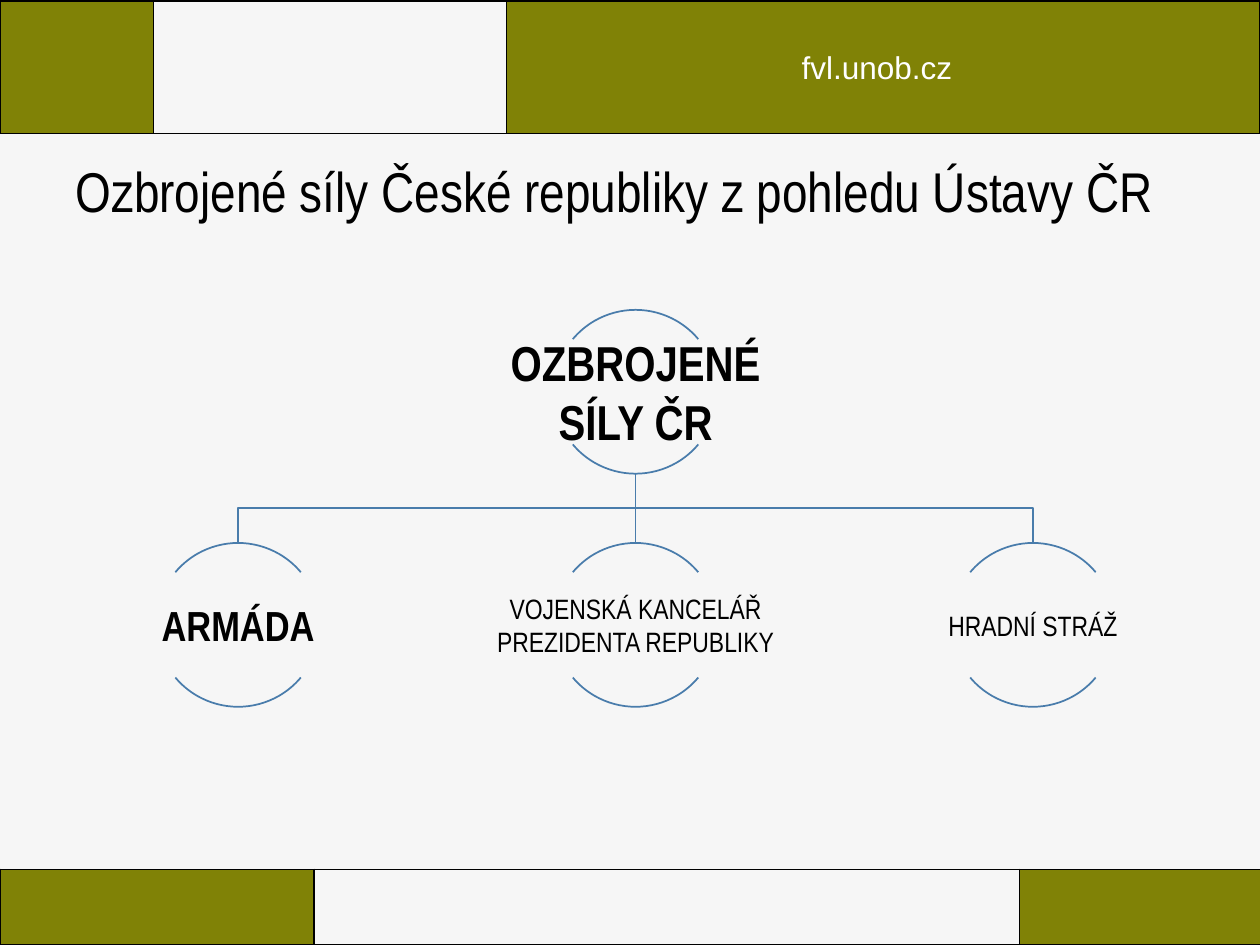
from lxml import etree
from pptx import Presentation
from pptx.dml.color import RGBColor
from pptx.enum.shapes import MSO_CONNECTOR as LINK, MSO_SHAPE as SHAPE
from pptx.enum.text import MSO_ANCHOR as ANCHOR, PP_ALIGN as ALIGN
from pptx.oxml import parse_xml
from pptx.oxml.ns import nsdecls, qn
from pptx.util import Pt

THEME = {
    "paper": "F6F6F6", "olive": "808206", "ink": "000000", "light": "FFFFFF", "link": "497CAB",
    "sans": "Arial", "narrow": "Arial Narrow",
    "site": 18, "title": 32, "root": 28, "army": 24, "unit": 16,
}

SITE = "fvl.unob.cz"
TITLE = "Ozbrojené síly České republiky z pohledu Ústavy ČR"
ROOT = {"lines": ["OZBROJENÉ SÍLY ČR"], "size": THEME["root"], "bold": True}
UNITS = [
    {"lines": ["ARMÁDA"], "size": THEME["army"], "bold": True},
    {"lines": ["VOJENSKÁ KANCELÁŘ", "PREZIDENTA REPUBLIKY"], "size": THEME["unit"], "inset": 0.7},
    {"lines": ["HRADNÍ STRÁŽ"], "size": THEME["unit"], "inset": 0.7},
]
BANDS = [
    {"top": 496.8, "height": 43.2, "columns": [179.3, 403.2, 138.2]},
    {"top": 0.7, "height": 75.6, "columns": [87.8, 201.6, 430.6]},
]

CENTER_X, UNIT_STEP = 363.2, 227.1
RING, LABEL_W, LABEL_H = 93.6, 187.2, 59.8
ROOT_TOP, UNIT_TOP = 177.1, 310.3
ARCS = [(132, 192), (24, 84)]


def color(name):
    return RGBColor.from_string(THEME[name])


def add_text(lines, left, top, width, height, size, font="narrow", ink="ink", bold=False,
             align=ALIGN.CENTER, anchor=ANCHOR.MIDDLE, inset=None, spacing=None):
    frame = slide.shapes.add_textbox(Pt(left), Pt(top), Pt(width), Pt(height)).text_frame
    frame.word_wrap = True
    frame.vertical_anchor = anchor
    if inset is not None:
        frame.margin_left = frame.margin_right = Pt(inset)
        frame.margin_top = frame.margin_bottom = Pt(inset)
    for index, line in enumerate(lines):
        paragraph = frame.add_paragraph() if index else frame.paragraphs[0]
        paragraph.alignment = align
        paragraph.line_spacing = spacing
        run = paragraph.add_run()
        run.text = line
        run.font.name, run.font.size, run.font.bold = THEME[font], Pt(size), bold
        run.font.color.rgb = color(ink)


def add_borders(cell):
    properties = cell._tc.get_or_add_tcPr()
    for index, side in enumerate(["lnL", "lnR", "lnT", "lnB"]):
        properties.insert(index, parse_xml(
            f'<a:{side} {nsdecls("a")} w="{Pt(1)}"><a:solidFill>'
            f'<a:srgbClr val="{THEME["ink"]}"/></a:solidFill></a:{side}>'))


def add_band(top, height, columns):
    band = slide.shapes.add_table(1, len(columns), 0, Pt(top), Pt(sum(columns)), Pt(height)).table
    band.first_row = band.horz_banding = False
    for index, width in enumerate(columns):
        band.columns[index].width = Pt(width)
        cell = band.cell(0, index)
        if index == 1:
            cell.fill.background()
        else:
            cell.fill.solid()
            cell.fill.fore_color.rgb = color("olive")
        add_borders(cell)


def style_line(part):
    part.line.color.rgb = color("link")
    part.line.width = Pt(1)


def add_branch(x):
    start, end = ROOT_TOP + RING, UNIT_TOP
    if x == CENTER_X:
        branch = slide.shapes.add_connector(LINK.STRAIGHT, Pt(x), Pt(start), Pt(x), Pt(end))
        etree.SubElement(branch._element.spPr, qn("a:effectLst"))
        style_line(branch)
        return
    middle = (start + end) / 2
    outline = slide.shapes.build_freeform(Pt(CENTER_X), Pt(start))
    corners = [(CENTER_X, middle), (x, middle), (x, end)]
    outline.add_line_segments([(Pt(a), Pt(b)) for a, b in corners], close=False)
    branch = outline.convert_to_shape()
    branch.fill.background()
    branch.shadow.inherit = False
    style_line(branch)


def add_node(x, top, lines, size, bold=False, inset=1.4):
    for angles in ARCS:
        arc = slide.shapes.add_shape(SHAPE.ARC, Pt(x - RING / 2), Pt(top), Pt(RING), Pt(RING))
        arc.adjustments[0], arc.adjustments[1] = angles
        arc.fill.background()
        arc.shadow.inherit = False
        style_line(arc)
    add_text(lines, x - LABEL_W / 2, top + (RING - LABEL_H) / 2, LABEL_W, LABEL_H,
             size, bold=bold, inset=inset)


deck = Presentation()
deck.slide_width, deck.slide_height = Pt(720), Pt(540)
slide = deck.slides.add_slide(deck.slide_layouts[6])
slide.background.fill.solid()
slide.background.fill.fore_color.rgb = color("paper")

for band in BANDS:
    add_band(**band)
add_text([SITE], 423.4, 23.8, 155.5, 28.8, THEME["site"], font="sans", ink="light",
         anchor=ANCHOR.TOP)
add_text([TITLE], 36, 77, 648, 67.7, THEME["title"], align=ALIGN.LEFT, spacing=0.9)

unit_centers = [CENTER_X + (index - 1) * UNIT_STEP for index in range(len(UNITS))]
for x in reversed(unit_centers):
    add_branch(x)
add_node(CENTER_X, ROOT_TOP, **ROOT)
for x, unit in zip(unit_centers, UNITS):
    add_node(x, UNIT_TOP, **unit)

deck.save("out.pptx")
